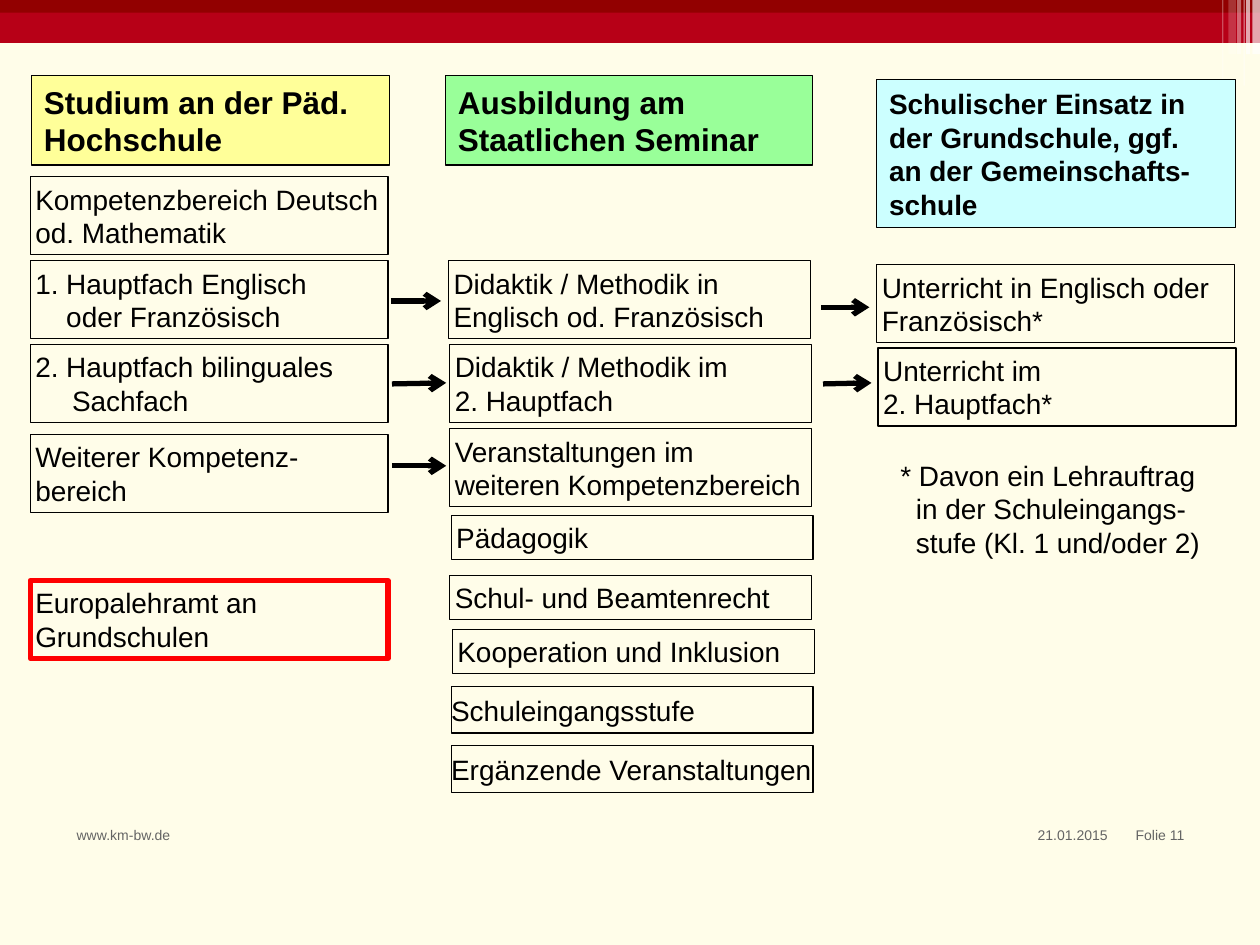
from lxml.etree import SubElement
from pptx import Presentation
from pptx.dml.color import RGBColor
from pptx.enum.shapes import MSO_CONNECTOR, MSO_SHAPE
from pptx.enum.text import MSO_ANCHOR as Anchor, PP_ALIGN as Align
from pptx.oxml.ns import qn
from pptx.util import Pt

COLORS = {
    "cream": "FFFDE9", "red": "B70017", "dark_red": "920000", "white": "FFFFFF",
    "yellow": "FFFF99", "green": "99FF99", "cyan": "CCFFFF",
    "black": "000000", "gray": "646464", "signal": "FF0000",
}

deck = Presentation()
deck.slide_width, deck.slide_height = Pt(720), Pt(540)
page = deck.slides.add_slide(deck.slide_layouts[6])
page.background.fill.solid()
page.background.fill.fore_color.rgb = RGBColor.from_string(COLORS["cream"])


def add_rect(left, top, width, height, fill=None, line=None, weight=0.75, opacity=100):
    box = page.shapes.add_shape(MSO_SHAPE.RECTANGLE, Pt(left), Pt(top), Pt(width), Pt(height))
    box.shadow.inherit = False
    if fill:
        box.fill.solid()
        box.fill.fore_color.rgb = RGBColor.from_string(COLORS[fill])
        if opacity < 100:
            color = box.fill._xPr.find(qn("a:solidFill"))[0]
            SubElement(color, qn("a:alpha"), val=str(opacity * 1000))
    else:
        box.fill.background()
    if line:
        box.line.color.rgb = RGBColor.from_string(COLORS[line])
        box.line.width = Pt(weight)
    else:
        box.line.fill.background()
    return box


def write(box, text, size=16, bold=False, color="black", align=Align.LEFT,
          anchor=Anchor.MIDDLE, inset=(2.9, 2.9), hanging=0):
    frame = box.text_frame
    frame.word_wrap = True
    frame.vertical_anchor = anchor
    frame.margin_left = frame.margin_right = Pt(inset[0])
    frame.margin_top = frame.margin_bottom = Pt(inset[1])
    para = frame.paragraphs[0]
    para.text = text.replace("\n", "\v")
    para.alignment = align
    if hanging:
        properties = para._p.get_or_add_pPr()
        properties.set("marL", str(Pt(hanging)))
        properties.set("indent", str(-Pt(hanging)))
    for line_break in para._p.findall(qn("a:br")):
        SubElement(line_break, qn("a:rPr"), sz=str(size * 100))
    for span in para.runs:
        span.font.name = "Arial"
        span.font.size = Pt(size)
        span.font.bold = bold
        span.font.color.rgb = RGBColor.from_string(COLORS[color])


# Banner with translucent stripes at its right end
add_rect(0, 0, 720, 24.5, "red")
add_rect(0, 0, 720, 7.2, "dark_red")
for left, width, height, opacity in [
    (712.1, 2.2, 31, 65), (715.7, 4.3, 31, 65), (698.4, 0.7, 46, 30),
    (710.6, 0.7, 49, 60), (702, 4.3, 31, 20), (707, 2.2, 31, 40),
]:
    add_rect(left, 0, width, height, "white", opacity=opacity)

# Column headings
for left, top, width, height, fill, size, text in [
    (18, 43.2, 204.5, 51.1, "yellow", 18, "Studium an der Päd. Hochschule"),
    (254.6, 43.2, 209.8, 51.1, "green", 18, "Ausbildung am Staatlichen Seminar"),
    (501, 45.4, 205.2, 84.8, "cyan", 16,
     "Schulischer Einsatz in der Grundschule, ggf.\nan der Gemeinschafts-schule"),
]:
    write(add_rect(left, top, width, height, fill, "black"), text,
          size=size, bold=True, inset=(7.2, 3.6))

# Two-line boxes: left, top, width, hanging indent, text
STUDY, SEMINAR, SCHOOL = 204.5, 206.8, 204.5
for left, top, width, hanging, text in [
    (17.3, 101, STUDY, 0, "Kompetenzbereich Deutsch od. Mathematik"),
    (17.3, 149, STUDY, 17.7, "1. Hauptfach Englisch\noder Französisch"),
    (17.3, 196.8, STUDY, 21, "2. Hauptfach bilinguales\nSachfach"),
    (17.3, 248.2, STUDY, 0, "Weiterer Kompetenz- bereich"),
    (256.3, 149, SEMINAR, 0, "Didaktik / Methodik in Englisch od. Französisch"),
    (257, 196.8, SEMINAR, 0, "Didaktik / Methodik im\n2. Hauptfach"),
    (257, 244.9, SEMINAR, 0, "Veranstaltungen im weiteren Kompetenzbereich"),
    (501, 151.2, SCHOOL, 0, "Unterricht in Englisch oder Französisch*"),
    (501.8, 198.8, SCHOOL, 0, "Unterricht im\n2. Hauptfach*"),
]:
    write(add_rect(left, top, width, 44.6, line="black"), text, hanging=hanging)

# One-line seminar boxes
for left, top, height, inset, text in [
    (257.8, 294.6, 25.2, (2.9, 2.9), "Pädagogik"),
    (257, 328.8, 25.2, (2.9, 2.9), "Schul- und Beamtenrecht"),
    (258.5, 359.8, 25.2, (2.9, 2.9), "Kooperation und Inklusion"),
    (257.8, 392.4, 26.6, (0, 3.6), "Schuleingangsstufe"),
    (257.8, 426.2, 26.6, (0, 3.6), "Ergänzende Veranstaltungen"),
]:
    write(add_rect(left, top, SEMINAR, height, line="black"), text, inset=inset)

# Highlighted degree name
write(add_rect(17.3, 331.7, STUDY, 44.6, line="signal", weight=3),
      "Europalehramt an Grundschulen")

# Arrows between the columns
for x1, y1, x2, y2 in [
    (223.4, 172, 252, 172), (224, 219.4, 255, 218.8), (224, 266.2, 255, 266.2),
    (469.2, 175.6, 496.8, 175.6), (470.3, 219.4, 498, 218.8),
]:
    arrow = page.shapes.add_connector(MSO_CONNECTOR.STRAIGHT, Pt(x1), Pt(y1), Pt(x2), Pt(y2))
    arrow.line.color.rgb = RGBColor.from_string(COLORS["black"])
    arrow.line.width = Pt(3)
    SubElement(arrow.line._get_or_add_ln(), qn("a:tailEnd"), type="arrow")
    SubElement(arrow._element.spPr, qn("a:effectLst"))

# Footnote and footer
note = page.shapes.add_textbox(Pt(507.4), Pt(257.8), Pt(199), Pt(65.5))
write(note, "* Davon ein Lehrauftrag\nin der Schuleingangs-\nstufe (Kl. 1 und/oder 2)",
      inset=(7.2, 3.6), hanging=8.9)
for left, width, align, text in [
    (36.7, 212.4, Align.LEFT, "www.km-bw.de"),
    (524.2, 116, Align.RIGHT, "21.01.2015"),
    (624, 60, Align.RIGHT, "Folie 11"),
]:
    footer = page.shapes.add_textbox(Pt(left), Pt(468.7), Pt(width), Pt(28))
    write(footer, text, size=8, color="gray", align=align, anchor=Anchor.TOP, inset=(7.2, 3.6))

deck.save("out.pptx")
